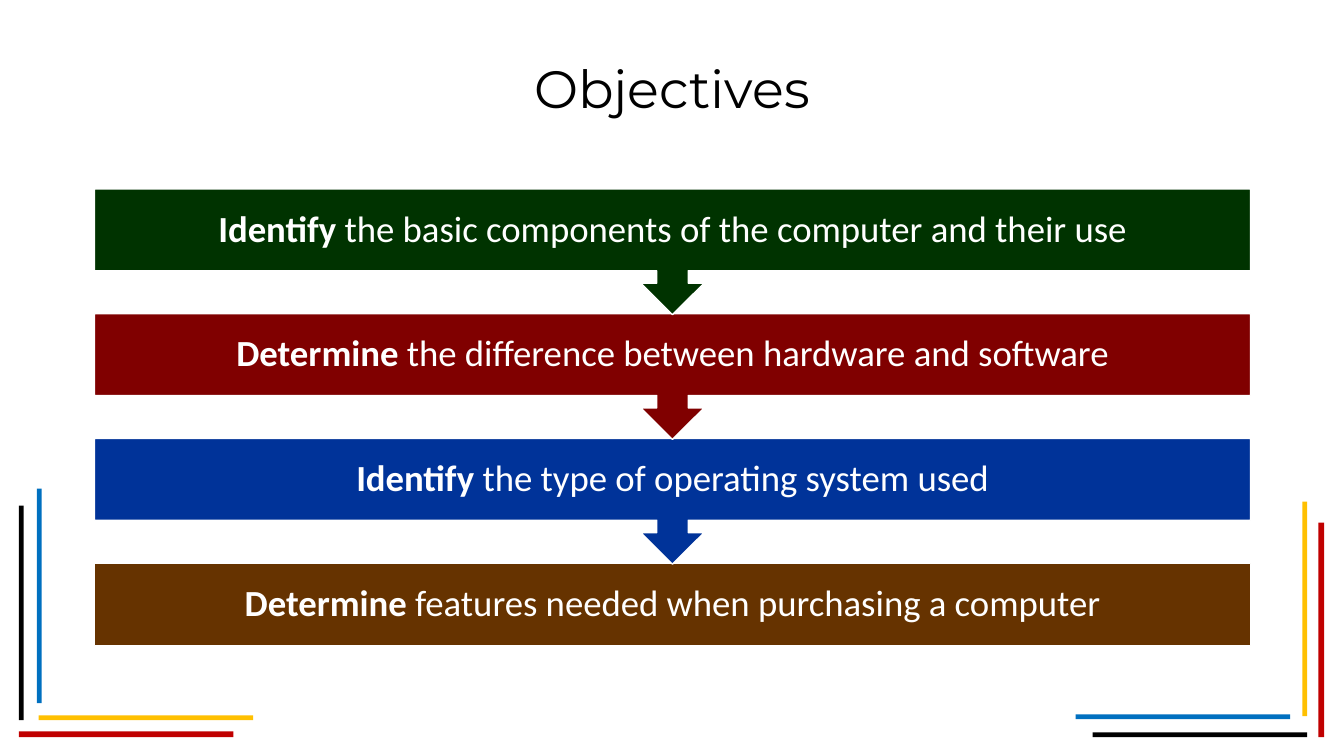
from dataclasses import dataclass
from typing import NamedTuple

from pptx import Presentation
from pptx.dml.color import RGBColor as RGB
from pptx.enum.shapes import MSO_SHAPE as Shape
from pptx.enum.text import MSO_ANCHOR as Anchor, PP_ALIGN as Align
from pptx.slide import Slide
from pptx.text.text import _Run as Run
from pptx.util import Emu, Pt

EMU_PER_PX = 9144


@dataclass(frozen=True)
class Theme:
    black: str = "000000"
    white: str = "FFFFFF"
    red: str = "C00000"
    yellow: str = "FFC000"
    blue: str = "0070C0"
    title_font: str = "Montserrat"
    body_font: str = "Calibri"
    title_size: int = 40
    body_size: int = 28


class Box(NamedTuple):
    x: int
    y: int
    w: int
    h: int


class Bar(NamedTuple):
    box: Box
    color: str


class Objective(NamedTuple):
    verb: str
    rest: str
    color: str


T = Theme()
BAR_LENGTH = 227
BARS = (
    Bar(Box(20, 535, 5, BAR_LENGTH), T.black),
    Bar(Box(20, 774, BAR_LENGTH, 6), T.red),
    Bar(Box(41, 757, BAR_LENGTH, 5), T.yellow),
    Bar(Box(39, 517, 5, BAR_LENGTH), T.blue),
    Bar(Box(1156, 775, BAR_LENGTH, 5), T.black),
    Bar(Box(1395, 553, 6, BAR_LENGTH), T.red),
    Bar(Box(1378, 531, 5, BAR_LENGTH), T.yellow),
    Bar(Box(1138, 756, BAR_LENGTH, 5), T.blue),
)
OBJECTIVES = (
    Objective("Identify", " the basic components of the computer and their use", "003300"),
    Objective("Determine", " the difference between hardware and software", "800000"),
    Objective("Identify", " the type of operating system used", "003399"),
    Objective("Determine", " features needed when purchasing a computer", "663300"),
)
FIRST_STEP = Box(100, 200, 1223, 87)
STEP_PITCH = 132
CALLOUT_HEIGHT = 133


def px(n: int) -> Emu:
    """Turn px into EMU."""
    return Emu(n * EMU_PER_PX)


def add_filled(s: Slide, kind: Shape, box: Box, color: str, outline: bool = False):
    """Draw a flat shape, optionally with a thin white outline."""
    sp = s.shapes.add_shape(kind, *map(px, box))
    sp.shadow.inherit = False
    sp.fill.solid()
    sp.fill.fore_color.rgb = RGB.from_string(color)
    if outline:
        sp.line.color.rgb = RGB.from_string(T.white)
        sp.line.width = Pt(1)
    else:
        sp.line.fill.background()
    return sp


def style_run(r: Run, font: str, size: int, color: str, bold: bool = False) -> None:
    """Set the look of a run."""
    r.font.name = font
    r.font.size = Pt(size)
    r.font.bold = bold
    r.font.color.rgb = RGB.from_string(color)


def add_centred_text(s: Slide, box: Box, text: str, inset: int):
    """Add a centred text box and return its paragraph."""
    tf = s.shapes.add_textbox(*map(px, box)).text_frame
    tf.word_wrap = True
    tf.vertical_anchor = Anchor.MIDDLE
    tf.margin_left = tf.margin_right = tf.margin_top = tf.margin_bottom = px(inset)
    tf.text = text
    p = tf.paragraphs[0]
    p.alignment = Align.CENTER
    return p


def add_objective(s: Slide, index: int, item: Objective) -> None:
    """Draw one step, with a down arrow unless it is the last."""
    box = FIRST_STEP._replace(y=FIRST_STEP.y + index * STEP_PITCH)
    if index == len(OBJECTIVES) - 1:
        add_filled(s, Shape.RECTANGLE, box, item.color, outline=True)
    else:
        callout = box._replace(h=CALLOUT_HEIGHT)
        sp = add_filled(s, Shape.UP_ARROW_CALLOUT, callout, item.color, outline=True)
        sp.rotation = 180
    p = add_centred_text(s, box, item.verb, 22)
    p.line_spacing = 0.9
    p.add_run().text = item.rest
    for r, bold in zip(p.runs, (True, False)):
        style_run(r, T.body_font, T.body_size, T.white, bold)


def main() -> None:
    """Build the objectives slide."""
    prs = Presentation()
    prs.slide_width, prs.slide_height = px(1422), px(800)
    s = prs.slides.add_slide(prs.slide_layouts[6])
    for bar in BARS:
        add_filled(s, Shape.RECTANGLE, bar.box, bar.color)
    p = add_centred_text(s, Box(111, 30, 1200, 125), "Objectives", 5)
    style_run(p.runs[0], T.title_font, T.title_size, T.black)
    for index, item in reversed(list(enumerate(OBJECTIVES))):
        add_objective(s, index, item)
    prs.save("out.pptx")


if __name__ == "__main__":
    main()
